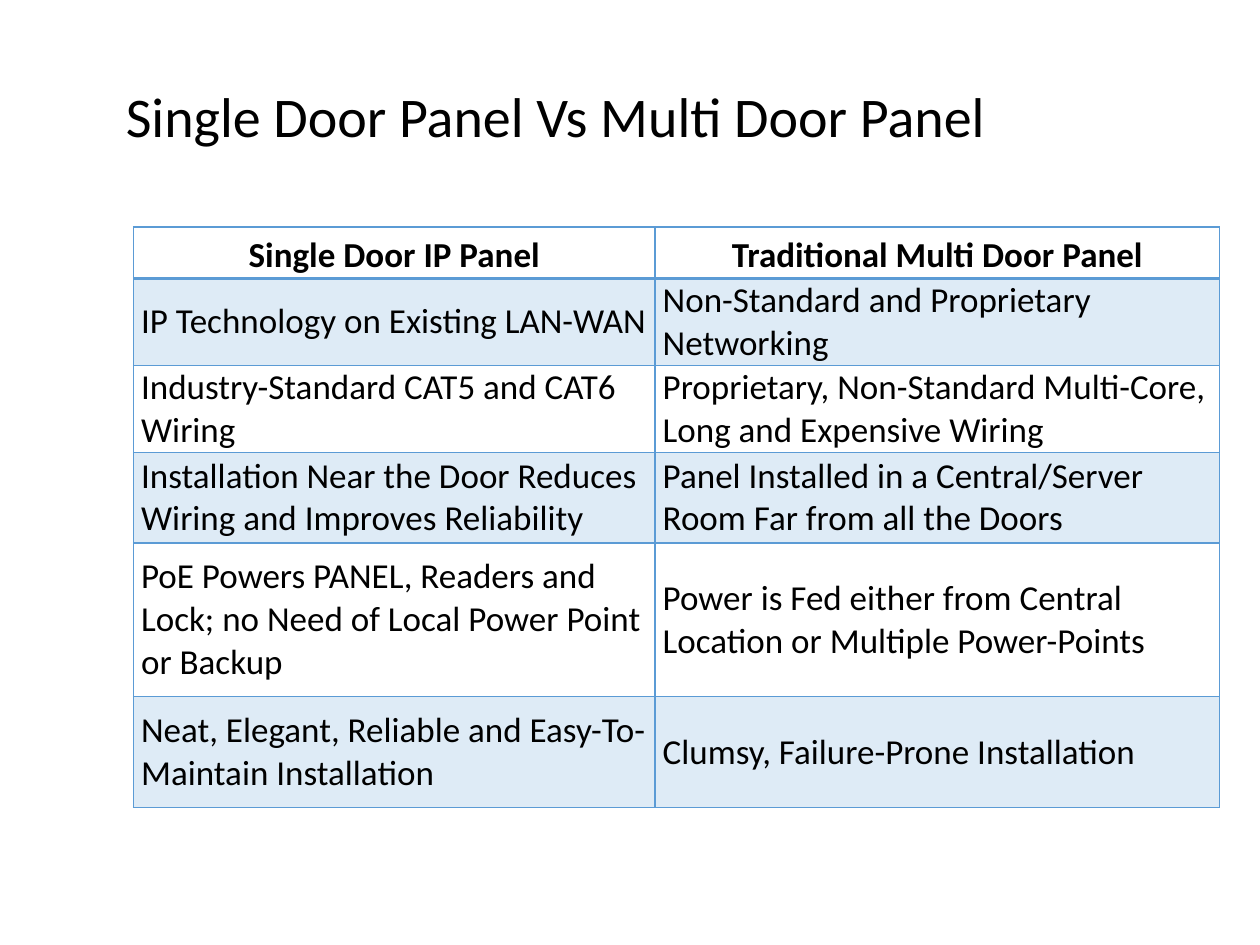
from lxml import etree
from pptx import Presentation
from pptx import util as u
from pptx.dml.color import RGBColor
from pptx.enum import text as t
from pptx.oxml import ns

HUES = {"ink": "000000", "blue": "5B9BD5"}
ROWS = [
    ("Single Door IP Panel", "Traditional Multi Door Panel"),
    ("IP Technology on Existing LAN-WAN",
     "Non-Standard and Proprietary Networking"),
    ("Industry-Standard CAT5 and CAT6 Wiring",
     "Proprietary, Non-Standard Multi-Core, Long and Expensive Wiring"),
    ("Installation Near the Door Reduces Wiring and Improves Reliability",
     "Panel Installed in a Central/Server Room Far from all the Doors"),
    ("PoE Powers PANEL, Readers and Lock; no Need of Local Power Point or Backup",
     "Power is Fed either from Central Location or Multiple Power-Points"),
    ("Neat, Elegant, Reliable and Easy-To-Maintain Installation",
     "Clumsy, Failure-Prone Installation"),
]
WIDTHS = [4.14, 4.48]
HEIGHTS = [0.41, 0.69, 0.69, 0.72, 1.22, 0.88]


def write(frame, words, size=20, bold=False, align=t.PP_ALIGN.LEFT, lead=1.0):
    par = frame.paragraphs[0]
    par.alignment, par.line_spacing = align, lead
    run = par.add_run()
    run.text = words
    font = run.font
    font.name, font.size, font.bold = "Calibri", u.Pt(size), bold
    font.color.rgb = RGBColor.from_string(HUES["ink"])


def tag(parent, name, **attrs):
    return etree.SubElement(parent, ns.qn(name), **attrs)


class Deck:
    def __init__(self):
        self.prs = Presentation()
        self.prs.slide_width, self.prs.slide_height = u.Inches(10), u.Inches(7.5)
        self.slide = self.prs.slides.add_slide(self.prs.slide_layouts[6])

    def title(self, words, *box):
        frame = self.slide.shapes.add_textbox(*map(u.Inches, box)).text_frame
        frame.word_wrap = True
        frame.auto_size = t.MSO_AUTO_SIZE.SHAPE_TO_FIT_TEXT
        write(frame, words, size=32)

    def edges(self, cell, base):
        props = cell._tc.get_or_add_tcPr()
        for side, wide in zip("LRTB", (1, 1, 1, base)):
            line = tag(props, f"a:ln{side}", w=str(u.Pt(wide)))
            tag(tag(line, "a:solidFill"), "a:srgbClr", val=HUES["blue"])

    def shade(self, cell, alpha):
        cell.fill.solid()
        cell.fill.fore_color.rgb = RGBColor.from_string(HUES["blue"])
        hue = cell._tc.tcPr.find("a:solidFill/a:srgbClr", ns._nsmap)
        tag(hue, "a:alpha", val=str(alpha * 1000))

    def table(self, left, top):
        box = map(u.Inches, (left, top, sum(WIDTHS), sum(HEIGHTS)))
        grid = self.slide.shapes.add_table(len(ROWS), len(WIDTHS), *box).table
        for col, wide in zip(grid.columns, WIDTHS):
            col.width = u.Inches(wide)
        for row, high in zip(grid.rows, HEIGHTS):
            row.height = u.Inches(high)
        for i, row in enumerate(ROWS):
            for j, words in enumerate(row):
                self.cell(grid.cell(i, j), words, i)

    def cell(self, cell, words, row):
        head = row == 0
        cell.vertical_anchor = t.MSO_ANCHOR.MIDDLE
        cell.margin_left = cell.margin_right = u.Inches(0.06)
        cell.margin_top = cell.margin_bottom = 0
        # Borders come before the fill in the cell properties
        self.edges(cell, 2 if head else 1)
        if row % 2:
            self.shade(cell, 20)
        else:
            cell.fill.background()
        if head:
            write(cell.text_frame, words, bold=True,
                  align=t.PP_ALIGN.CENTER, lead=1.15)
        else:
            write(cell.text_frame, words)


def main():
    deck = Deck()
    # Comparison table
    deck.table(1.06, 1.8)
    # Heading
    deck.title("Single Door Panel Vs Multi Door Panel", 0.9, 0.6, 7.14, 0.64)
    deck.prs.save("out.pptx")


if __name__ == "__main__":
    main()
